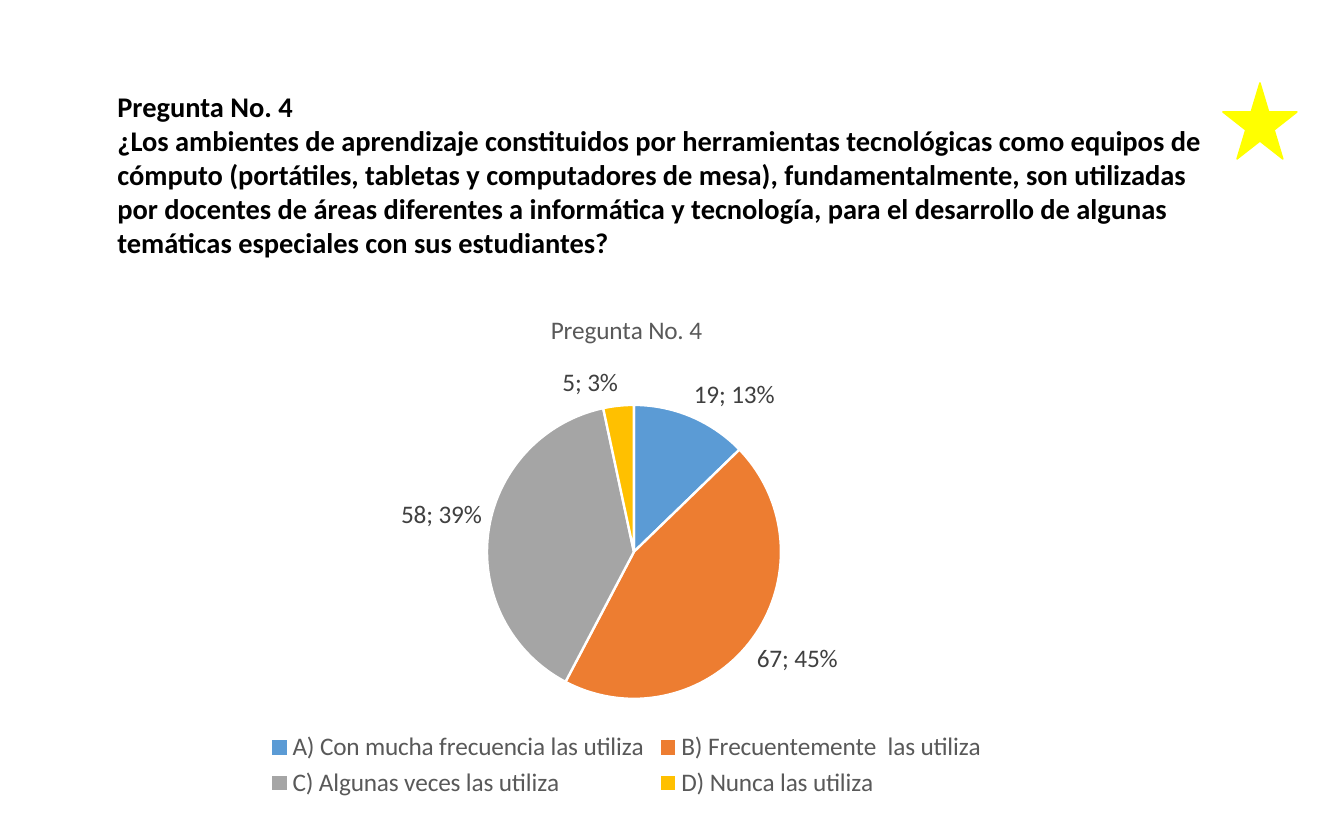
from pptx import Presentation
from pptx.chart.data import CategoryChartData
from pptx.dml.color import RGBColor
from pptx.enum.chart import XL_CHART_TYPE as ChartType
from pptx.enum.chart import XL_LABEL_POSITION as LabelPosition
from pptx.enum.chart import XL_LEGEND_POSITION as LegendPosition
from pptx.enum.shapes import MSO_SHAPE as Shape
from pptx.enum.text import MSO_ANCHOR as Anchor
from pptx.enum.text import MSO_AUTO_SIZE as AutoSize
from pptx.enum.text import PP_ALIGN as Align
from pptx.oxml.ns import qn
from pptx.util import Emu, Pt
from lxml.etree import SubElement

# Content
QUESTION = [
    "Pregunta No. 4",
    "¿Los ambientes de aprendizaje constituidos por herramientas tecnológicas como "
    "equipos de cómputo (portátiles, tabletas y computadores de mesa), "
    "fundamentalmente, son utilizadas por docentes de áreas diferentes a informática "
    "y tecnología, para el desarrollo de algunas temáticas especiales con sus "
    "estudiantes?",
]
CHART_TITLE = "Pregunta No. 4"

BLACK = RGBColor(0x00, 0x00, 0x00)
WHITE = RGBColor(0xFF, 0xFF, 0xFF)
YELLOW = RGBColor(0xFF, 0xFF, 0x00)
GRAY = RGBColor(0x59, 0x59, 0x59)
DARK_GRAY = RGBColor(0x40, 0x40, 0x40)
ANSWERS = [
    ("A) Con mucha frecuencia las utiliza", 19, RGBColor(0x5B, 0x9B, 0xD5)),
    ("B) Frecuentemente  las utiliza", 67, RGBColor(0xED, 0x7D, 0x31)),
    ("C) Algunas veces las utiliza", 58, RGBColor(0xA5, 0xA5, 0xA5)),
    ("D) Nunca las utiliza", 5, RGBColor(0xFF, 0xC0, 0x00)),
]
FONT = "Calibri"

# Geometry in px: left, top, width, height
SLIDE_SIZE = (1344, 840)
QUESTION_BOX = (106, 83, 1132, 184)
CHART_BOX = (140, 292, 973, 512)
PIE_BOX = (487, 405, 294, 294)
STAR_BOX = (1223, 83, 74, 76)
EMU_PER_PX = 914400 / 113.8


def px(*lengths):
    return [Emu(round(length * EMU_PER_PX)) for length in lengths]


def set_font(font, size, color, bold=False):
    font.name = FONT
    font.size = Pt(size)
    font.bold = bold
    font.color.rgb = color


presentation = Presentation()
presentation.slide_width, presentation.slide_height = px(*SLIDE_SIZE)
slide = presentation.slides.add_slide(presentation.slide_layouts[5])

# Question
title = slide.shapes.title
title.left, title.top, title.width, title.height = px(*QUESTION_BOX)
frame = title.text_frame
frame.text = "\n".join(QUESTION)
frame.word_wrap = True
frame.auto_size = AutoSize.NONE
frame.vertical_anchor = Anchor.TOP
for paragraph in frame.paragraphs:
    paragraph.alignment = Align.LEFT
    set_font(paragraph.font, 18, BLACK, bold=True)

# Pie chart
names, values, colors = zip(*ANSWERS)
chart_data = CategoryChartData()
chart_data.categories = names
chart_data.add_series("Series 1", values)
chart = slide.shapes.add_chart(ChartType.PIE, *px(*CHART_BOX), chart_data).chart
set_font(chart.font, 10, BLACK)

chart.has_title = True
chart.chart_title.include_in_layout = False
chart.chart_title.text_frame.text = CHART_TITLE
set_font(chart.chart_title.text_frame.paragraphs[0].font, 16, GRAY)

chart.has_legend = True
chart.legend.position = LegendPosition.BOTTOM
chart.legend.include_in_layout = False
set_font(chart.legend.font, 16, GRAY)

# Slices and their labels
plot = chart.plots[0]
plot.vary_by_categories = True
series = plot.series[0]
for index, color in enumerate(colors):
    slice_format = series.points[index].format
    slice_format.fill.solid()
    slice_format.fill.fore_color.rgb = color
    slice_format.line.color.rgb = WHITE
    slice_format.line.width = Pt(1.5)

labels = series.data_labels
labels.show_value = True
labels.show_percentage = True
labels.position = LabelPosition.OUTSIDE_END
set_font(labels.font, 16, DARK_GRAY)
labels_xml = series._element.find(qn("c:dLbls"))
separator = SubElement(labels_xml, qn("c:separator"))
separator.text = "; "
labels_xml.find(qn("c:showBubbleSize")).addnext(separator)

# Pie position as fractions of the chart area
plot_area = chart.element.find(".//" + qn("c:plotArea"))
for old_layout in plot_area.findall(qn("c:layout")):
    plot_area.remove(old_layout)
layout = SubElement(plot_area, qn("c:layout"))
plot_area.insert(0, layout)
manual = SubElement(layout, qn("c:manualLayout"))
chart_left, chart_top, chart_width, chart_height = CHART_BOX
pie_left, pie_top, pie_width, pie_height = PIE_BOX
settings = {
    "layoutTarget": "inner",
    "xMode": "edge",
    "yMode": "edge",
    "x": round((pie_left - chart_left) / chart_width, 4),
    "y": round((pie_top - chart_top) / chart_height, 4),
    "w": round(pie_width / chart_width, 4),
    "h": round(pie_height / chart_height, 4),
}
for tag, value in settings.items():
    SubElement(manual, qn(f"c:{tag}")).set("val", str(value))

# Star
star = slide.shapes.add_shape(Shape.STAR_5_POINT, *px(*STAR_BOX))
star.shadow.inherit = False
star.fill.solid()
star.fill.fore_color.rgb = YELLOW
star.line.color.rgb = YELLOW
star.line.width = Pt(1)

presentation.save("out.pptx")
